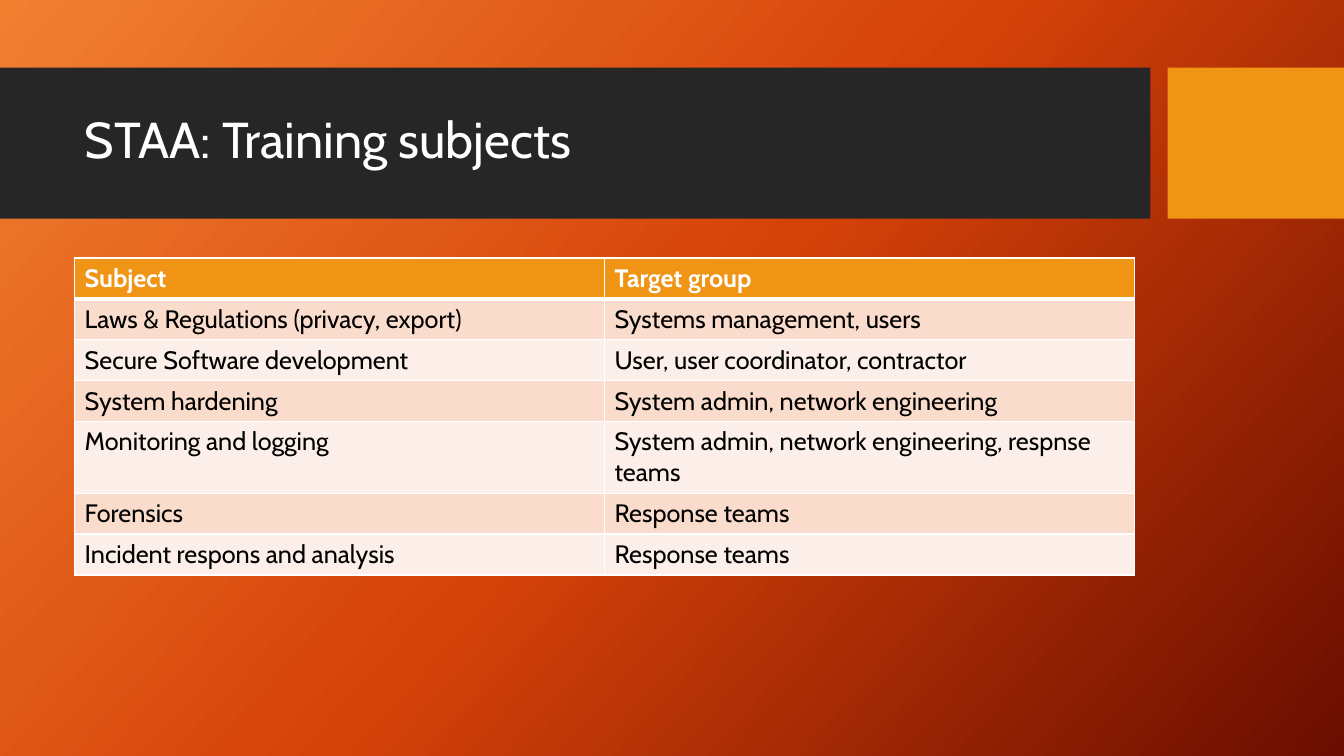
from lxml import etree
from pptx import Presentation
from pptx import util as u
from pptx.dml.color import RGBColor
from pptx.enum import shapes, text
from pptx.oxml import parse_xml
from pptx.oxml.ns import nsdecls, qn

TITLE = "STAA: Training subjects"
ROWS = [
    ("Subject", "Target group"),
    ("Laws & Regulations (privacy, export)", "Systems management, users"),
    ("Secure Software development", "User, user coordinator, contractor"),
    ("System hardening", "System admin, network engineering"),
    ("Monitoring and logging", "System admin, network engineering, respnse teams"),
    ("Forensics", "Response teams"),
    ("Incident respons and analysis", "Response teams"),
]
HEX = {"white": "FFFFFF", "black": "000000", "dark": "262626", "gold": "F09415",
       "odd": "F9DCCC", "even": "FCEEE8"}
GLOW = [(0, "F18031"), (50, "D54209"), (100, "6A0D00")]
ANGLE = 42
FONT = "Cabin"

WIDE, HIGH = 13.33, 7.5
LEFT, SPAN = 0.74, 10.51
BAND = (0.67, 1.5)
BARS = [(0, 11.41, "dark"), (11.58, WIDE - 11.58, "gold")]
TOP, DEPTH = 2.56, 3.14
TALL, TALL_H = 4, 0.71


def color(name):
    return RGBColor.from_string(HEX[name])


def write(frame, words, size=18, ink="black", bold=False, lead=None):
    par = frame.paragraphs[0]
    par.alignment = text.PP_ALIGN.LEFT
    if lead:
        par.line_spacing = lead
    run = par.add_run()
    run.text = words
    run.font.name = FONT
    run.font.size = u.Pt(size)
    run.font.bold = bold
    run.font.color.rgb = color(ink)


def glow(slide):
    slide.background.fill.gradient()
    grad = slide.element.find(".//" + qn("a:gradFill"))
    stops = grad.find(qn("a:gsLst"))
    for old in list(stops):
        stops.remove(old)
    for pos, tone in GLOW:
        stop = etree.SubElement(stops, qn("a:gs"), pos=str(pos * 1000))
        etree.SubElement(stop, qn("a:srgbClr"), val=tone)
    grad.find(qn("a:lin")).set("ang", str(ANGLE * 60000))


def edge(cell, row):
    widths = {"L": 1, "R": 1, "T": 3 if row == 1 else 1, "B": 3 if row == 0 else 1}
    props = cell._tc.get_or_add_tcPr()
    for spot, (side, width) in enumerate(widths.items()):
        props.insert(spot, parse_xml(
            f'<a:ln{side} {nsdecls("a")} w="{u.Pt(width)}"><a:solidFill>'
            f'<a:srgbClr val="{HEX["white"]}"/></a:solidFill></a:ln{side}>'))


def bars(slide):
    top, high = BAND
    for left, wide, tone in BARS:
        bar = slide.shapes.add_shape(
            shapes.MSO_SHAPE.RECTANGLE,
            *map(u.Inches, (left, top, wide, high)))
        bar.shadow.inherit = False
        bar.fill.solid()
        bar.fill.fore_color.rgb = color(tone)
        bar.line.fill.background()


def title(slide):
    head = slide.shapes.title
    head.left, head.top, head.width, head.height = map(
        u.Inches, (LEFT, 0.82, SPAN, 1.18))
    frame = head.text_frame
    frame.word_wrap = True
    frame.auto_size = text.MSO_AUTO_SIZE.NONE
    frame.vertical_anchor = text.MSO_ANCHOR.MIDDLE
    write(frame, TITLE, size=36, ink="white", lead=0.9)
    slide.shapes._spTree.append(head._element)


def grid(slide):
    count = len(ROWS)
    table = slide.shapes.add_table(
        count, len(ROWS[0]), *map(u.Inches, (LEFT, TOP, SPAN, DEPTH))).table
    for col in table.columns:
        col.width = u.Inches(SPAN / len(ROWS[0]))
    for r, row in enumerate(ROWS):
        table.rows[r].height = u.Inches(
            TALL_H if r == TALL else (DEPTH - TALL_H) / (count - 1))
        tone = "gold" if r == 0 else "odd" if r % 2 else "even"
        for c, words in enumerate(row):
            cell = table.cell(r, c)
            cell.fill.solid()
            cell.fill.fore_color.rgb = color(tone)
            edge(cell, r)
            write(cell.text_frame, words, bold=r == 0,
                  ink="black" if r else "white")


def main():
    deck = Presentation()
    deck.slide_width, deck.slide_height = u.Inches(WIDE), u.Inches(HIGH)
    slide = deck.slides.add_slide(deck.slide_layouts[5])
    glow(slide)
    bars(slide)
    title(slide)
    grid(slide)
    deck.save("out.pptx")


if __name__ == "__main__":
    main()
